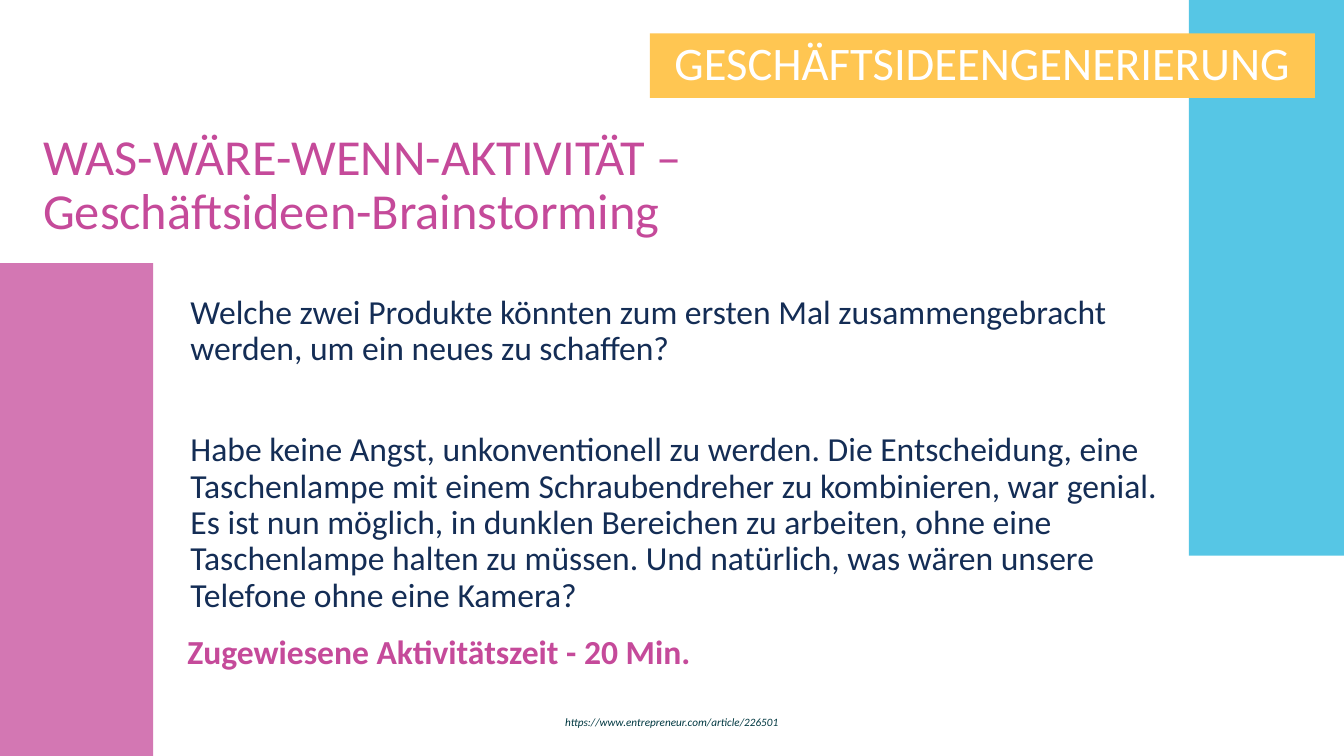
import pptx
import pptx.util
import pptx.dml.color
import pptx.enum.shapes
import pptx.enum.text
import pptx.oxml
import pptx.oxml.ns
import lxml.etree

Cm, Pt = pptx.util.Cm, pptx.util.Pt
PP_ALIGN = pptx.enum.text.PP_ALIGN
ANCHOR = pptx.enum.text.MSO_ANCHOR

COLORS = {"pink": "C54A9A", "blue": "1EB3DD", "amber": "FFC652",
          "navy": "142D55", "teal": "003841", "white": "FFFFFF"}
W, H = 33.87, 19.05

BANNER = "GESCHÄFTSIDEENGENERIERUNG"
TITLE = "WAS-WÄRE-WENN-AKTIVITÄT –\vGeschäftsideen-Brainstorming"
BODY = [
    "Welche zwei Produkte könnten zum ersten Mal zusammengebracht werden, "
    "um ein neues zu schaffen?",
    "Habe keine Angst, unkonventionell zu werden. Die Entscheidung, eine "
    "Taschenlampe mit einem Schraubendreher zu kombinieren, war genial. "
    "Es ist nun möglich, in dunklen Bereichen zu arbeiten, ohne eine "
    "Taschenlampe halten zu müssen. Und natürlich, was wären unsere "
    "Telefone ohne eine Kamera?",
]
TIME = "Zugewiesene Aktivitätszeit - 20 Min."
SOURCE = "https://www.entrepreneur.com/article/226501"

BARS = [
    ("pink", (0, 6.63, 3.86, H - 6.63)),
    ("blue", (W - 3.91, 0, 3.91, 14)),
]
TEXTS = [
    ([TITLE], (0.84, 3.2, 30.25, 2.95), dict(size=36, color="pink")),
    (BODY, (4.55, 7.32, 25.55, 8.3), dict(size=24, color="navy", gap=46.4)),
    ([TIME], (4.47, 15.88, 25.55, 1.3), dict(size=24, color="pink", bold=True)),
    ([SOURCE], (0, 17.93, W, 1.07),
     dict(size=8, color="teal", italic=True, align=PP_ALIGN.CENTER)),
]


def rgb(name):
    return pptx.dml.color.RGBColor.from_string(COLORS[name])


def write(shape, paragraphs, size, color, bold=False, italic=False,
          align=PP_ALIGN.LEFT, anchor=ANCHOR.TOP, gap=0):
    tf = shape.text_frame
    tf.word_wrap = True
    tf.vertical_anchor = anchor
    for i, text in enumerate(paragraphs):
        p = tf.add_paragraph() if i else tf.paragraphs[0]
        p.text = text
        p.alignment = align
        p.line_spacing = 0.9
        p.space_before = Pt(gap if i else 0)
        for r in p.runs:
            r.font.name = "Calibri"
            r.font.size = Pt(size)
            r.font.bold = bold
            r.font.italic = italic
            r.font.color.rgb = rgb(color)


def add_bar(s, color, box, opacity=100):
    bar = s.shapes.add_shape(pptx.enum.shapes.MSO_SHAPE.RECTANGLE, *map(Cm, box))
    bar.shadow.inherit = False
    bar.line.fill.background()
    bar.fill.solid()
    bar.fill.fore_color.rgb = rgb(color)
    if opacity < 100:
        qn = pptx.oxml.ns.qn
        clr = bar._element.spPr.find(qn("a:solidFill")).find(qn("a:srgbClr"))
        lxml.etree.SubElement(clr, qn("a:alpha")).set("val", str(opacity * 1000))
    return bar


def main():
    prs = pptx.Presentation()
    prs.slide_width, prs.slide_height = Cm(W), Cm(H)
    s = prs.slides.add_slide(prs.slide_layouts[6])
    for color, box in BARS:
        add_bar(s, color, box, opacity=75)
    banner = add_bar(s, "amber", (16.38, 0.84, 16.76, 1.63))
    write(banner, [BANNER], size=33.3, color="white",
          align=PP_ALIGN.CENTER, anchor=ANCHOR.MIDDLE)
    for paragraphs, box, style in TEXTS:
        write(s.shapes.add_textbox(*map(Cm, box)), paragraphs, **style)
    prs.save("out.pptx")


if __name__ == "__main__":
    main()
